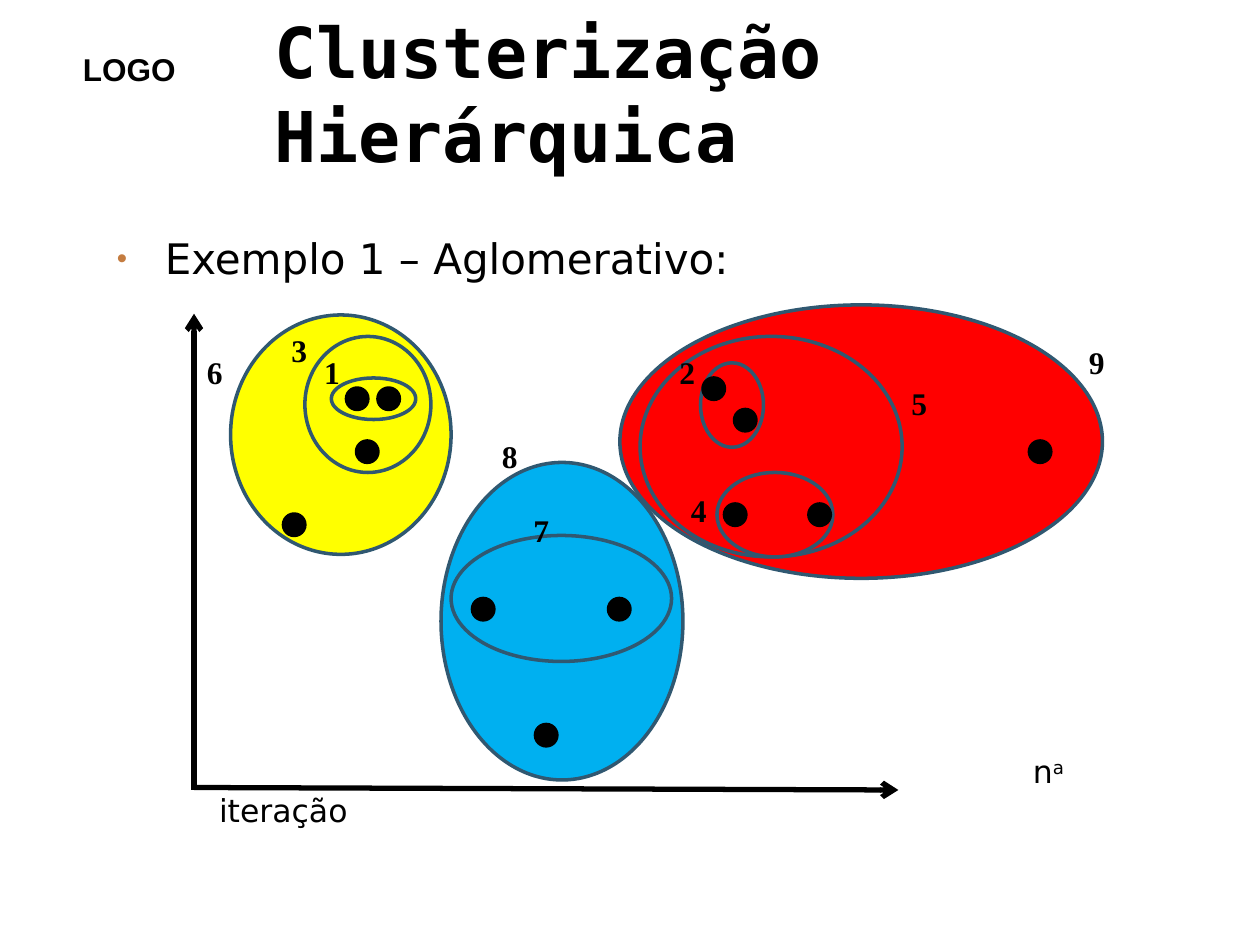
from lxml import etree
from pptx import Presentation
from pptx.dml.color import RGBColor
from pptx.enum.shapes import MSO_CONNECTOR, MSO_SHAPE
from pptx.enum.text import MSO_ANCHOR, PP_ALIGN
from pptx.oxml.ns import qn
from pptx.util import Inches, Pt

OVAL = MSO_SHAPE.OVAL
STRAIGHT = MSO_CONNECTOR.STRAIGHT
MIDDLE = MSO_ANCHOR.MIDDLE
TOP = MSO_ANCHOR.TOP
LEFT = PP_ALIGN.LEFT
CENTER = PP_ALIGN.CENTER
COLORS = {
    "black": "000000",
    "outline": "305871",
    "blue": "00B0F0",
    "red": "FF0000",
    "yellow": "FFFF00",
    "bullet": "C47C40",
}

prs = Presentation()
prs.slide_width = Inches(10)
prs.slide_height = Inches(7.5)
s = prs.slides.add_slide(prs.slide_layouts[6])


def add_text(box, text, size, font, bold=False, align=LEFT, anchor=TOP, margin=0.1, wrap=True):
    sp = s.shapes.add_textbox(*[Inches(v) for v in box])
    tf = sp.text_frame
    tf.word_wrap = wrap
    tf.vertical_anchor = anchor
    tf.margin_left = tf.margin_right = Inches(margin)
    p = tf.paragraphs[0]
    p.alignment = align
    p.add_run().text = text
    p.font.size = Pt(size)
    p.font.name = font
    p.font.bold = bold
    p.font.color.rgb = RGBColor.from_string(COLORS["black"])
    return p


def add_oval(box, fill, line):
    sp = s.shapes.add_shape(OVAL, *[Inches(v) for v in box])
    sp.shadow.inherit = False
    sp.fill.solid()
    sp.fill.fore_color.rgb = RGBColor.from_string(COLORS[fill])
    sp.line.color.rgb = RGBColor.from_string(COLORS[line])
    sp.line.width = Pt(2)


add_text((0.56, 0.35, 0.94, 0.4), "LOGO", 18, "Arial", bold=True, wrap=False)
add_text((2.08, 0.25, 7.42, 0.97), "Clusterização Hierárquica", 40, "DejaVu Sans Mono",
         bold=True, anchor=MIDDLE)

p = add_text((0.83, 1.8, 8.27, 0.5), "Exemplo 1 – Aglomerativo:", 24, "DejaVu Sans")
pPr = p._p.get_or_add_pPr()
pPr.set("marL", str(Inches(0.38)))
pPr.set("indent", str(-Inches(0.38)))
color = etree.Element(qn("a:buClr"))
etree.SubElement(color, qn("a:srgbClr"), val=COLORS["bullet"])
bullet = [
    color,
    etree.Element(qn("a:buSzPct"), val="70000"),
    etree.Element(qn("a:buFont"), typeface="Arial"),
    etree.Element(qn("a:buChar"), char="•"),
]
for i, el in enumerate(bullet):
    pPr.insert(i, el)

p = add_text((8.1, 5.92, 0.6, 0.4), "n", 18, "DejaVu Sans")
r = p.add_run()
r.text = "a"
r.font._element.set("baseline", "30000")
add_text((1.64, 6.23, 1.5, 0.4), "iteração", 18, "DejaVu Sans")

clusters = [
    (3.5, 3.67, 1.92, 2.52, "blue"),
    (3.58, 4.25, 1.75, 1, "blue"),
    (4.92, 2.42, 3.83, 2.17, "red"),
    (5.08, 2.67, 2.08, 1.75, "red"),
    (1.83, 2.5, 1.75, 1.9, "yellow"),
    (5.69, 3.75, 0.92, 0.67, "red"),
    (2.42, 2.67, 1, 1.08, "yellow"),
    (5.56, 2.88, 0.5, 0.67, "red"),
    (2.63, 3, 0.67, 0.33, "yellow"),
]
for *box, fill in clusters:
    add_oval(box, fill, "outline")

points = [
    (2.75, 3.08), (3, 3.08), (2.83, 3.5), (2.25, 4.08),
    (5.58, 3), (5.83, 3.25), (5.75, 4), (6.42, 4),
    (3.75, 4.75), (8.17, 3.5), (4.83, 4.75), (4.25, 5.75),
]
for x, y in points:
    add_oval((x, y, 0.17, 0.17), "black", "black")

steps = [
    (2.51, 2.75), (5.33, 2.75), (2.25, 2.58), (5.42, 3.85), (7.17, 3),
    (1.58, 2.75), (4.17, 4.01), (3.92, 3.42), (8.58, 2.67),
]
for number, (x, y) in enumerate(steps, 1):
    add_text((x, y, 0.25, 0.4), str(number), 18, "Times New Roman",
             bold=True, align=CENTER, margin=0)

axes = [(1.54, 6.27, 1.54, 2.49), (1.54, 6.25, 7.13, 6.27)]
for ends in axes:
    axis = s.shapes.add_connector(STRAIGHT, *[Inches(v) for v in ends])
    axis.line.color.rgb = RGBColor.from_string(COLORS["black"])
    axis.line.width = Pt(3)
    etree.SubElement(axis.line._get_or_add_ln(), qn("a:tailEnd"), type="arrow")
    etree.SubElement(axis._element.spPr, qn("a:effectLst"))

prs.save("out.pptx")
